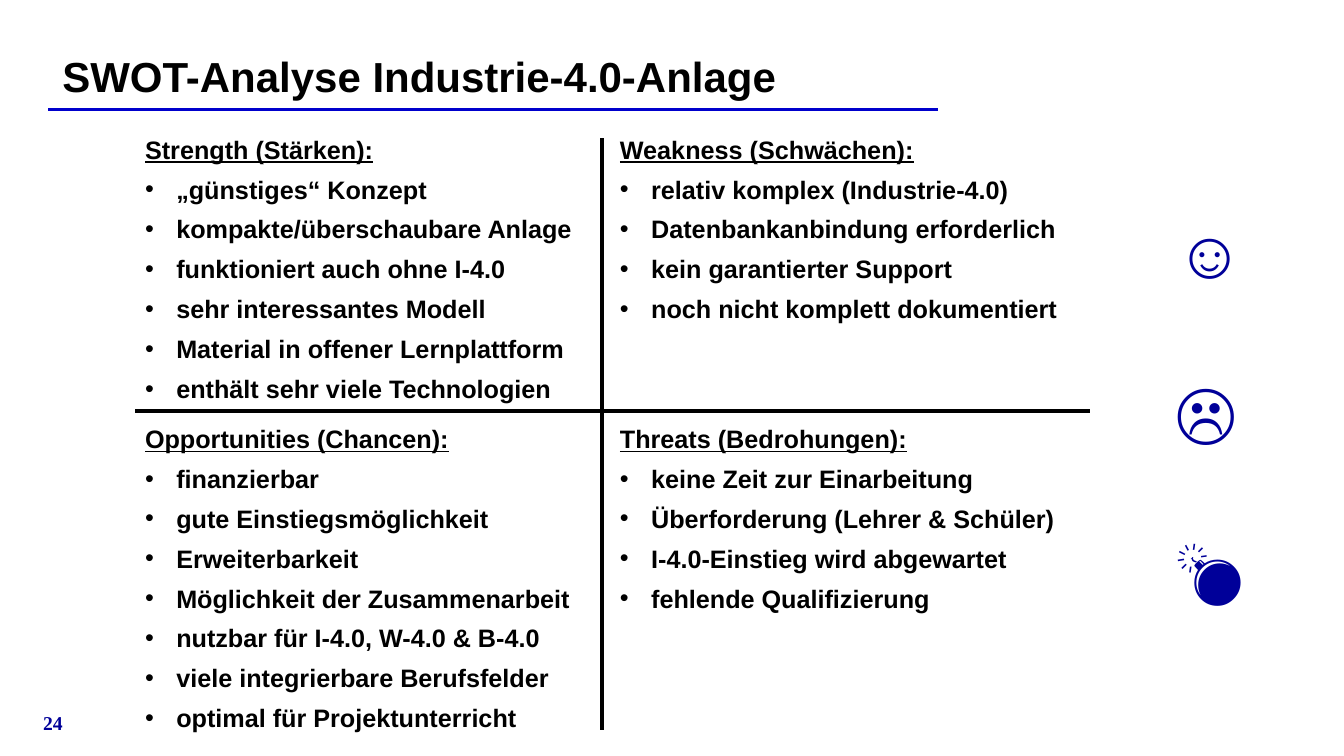
from dataclasses import dataclass

from lxml import etree
from pptx import Presentation
from pptx.dml.color import RGBColor
from pptx.enum.shapes import MSO_CONNECTOR
from pptx.enum.text import MSO_ANCHOR
from pptx.oxml.ns import qn
from pptx.util import Inches, Pt

STRAIGHT = MSO_CONNECTOR.STRAIGHT
MIDDLE = MSO_ANCHOR.MIDDLE


@dataclass(frozen=True)
class Theme:
    text: RGBColor = RGBColor(0x00, 0x00, 0x00)
    rule: RGBColor = RGBColor(0x00, 0x00, 0xCC)
    accent: RGBColor = RGBColor(0x00, 0x00, 0x99)
    sans: str = "Arial"
    serif: str = "Times New Roman"
    title_size: float = 30
    body_size: float = 18
    symbol_size: float = 48
    number_size: float = 14
    item_gap: float = 6.9
    symbol_gap: float = 55
    bullet_indent: float = 0.31


THEME = Theme()

# Rows of the SWOT grid, each with a left and a right quadrant.
SWOT = [
    [
        ("Strength (Stärken):", [
            "„günstiges“ Konzept",
            "kompakte/überschaubare Anlage",
            "funktioniert auch ohne I-4.0",
            "sehr interessantes Modell",
            "Material in offener Lernplattform",
            "enthält sehr viele Technologien",
        ]),
        ("Weakness (Schwächen):", [
            "relativ komplex (Industrie-4.0)",
            "Datenbankanbindung erforderlich",
            "kein garantierter Support",
            "noch nicht komplett dokumentiert",
        ]),
    ],
    [
        ("Opportunities (Chancen):", [
            "finanzierbar",
            "gute Einstiegsmöglichkeit",
            "Erweiterbarkeit",
            "Möglichkeit der Zusammenarbeit",
            "nutzbar für I-4.0, W-4.0 & B-4.0",
            "viele integrierbare Berufsfelder",
            "optimal für Projektunterricht",
        ]),
        ("Threats (Bedrohungen):", [
            "keine Zeit zur Einarbeitung",
            "Überforderung (Lehrer & Schüler)",
            "I-4.0-Einstieg wird abgewartet",
            "fehlende Qualifizierung",
        ]),
    ],
]
SYMBOLS = ["☺", "☹", "💣"]


def add_line(slide, start, end, color, width):
    line = slide.shapes.add_connector(STRAIGHT, *map(Inches, start + end))
    line.line.color.rgb = color
    line.line.width = Pt(width)
    etree.SubElement(line._element.spPr, qn("a:effectLst"))


def add_bullet(paragraph):
    properties = paragraph._p.get_or_add_pPr()
    indent = Inches(THEME.bullet_indent)
    properties.set("marL", str(indent))
    properties.set("indent", str(-indent))
    etree.SubElement(properties, qn("a:buFont")).set("typeface", THEME.sans)
    etree.SubElement(properties, qn("a:buChar")).set("char", "•")


def add_text(slide, box, lines, size, name, color, gap=0, bulleted=False, wrap=True):
    """Add a bold text box; with bulleted, every line after the first is a bullet."""
    frame = slide.shapes.add_textbox(*map(Inches, box)).text_frame
    frame.word_wrap = wrap
    for index, line in enumerate(lines):
        paragraph = frame.add_paragraph() if index else frame.paragraphs[0]
        paragraph.text = line
        if index:
            if bulleted:
                add_bullet(paragraph)
            paragraph.space_before = Pt(gap)
        font = paragraph.font
        font.size, font.name, font.bold = Pt(size), name, True
        font.color.rgb = color
    return frame


def add_header(slide, box):
    left, top, width, height = box
    frame = add_text(slide, box, ["SWOT-Analyse Industrie-4.0-Anlage"],
                     THEME.title_size, THEME.sans, THEME.text)
    frame.vertical_anchor = MIDDLE
    bottom = top + height
    add_line(slide, (left - 0.04, bottom), (left + width + 0.28, bottom), THEME.rule, 2.25)


def add_swot_grid(slide, box):
    left, top, width, height = box
    cross_x, cross_y = left + 4.63, top + 2.71
    add_line(slide, (left, cross_y), (left + width, cross_y), THEME.text, 3)
    add_line(slide, (cross_x, top), (cross_x, top + height), THEME.text, 3)
    columns = [(left, 4.59), (cross_x + 0.08, 4.69)]
    rows = [(top - 0.09, 2.73), (cross_y + 0.07, 3.11)]
    for (row_top, row_height), quadrants in zip(rows, SWOT):
        for (column_left, column_width), (heading, items) in zip(columns, quadrants):
            frame = add_text(slide, (column_left, row_top, column_width, row_height),
                             [heading, *items], THEME.body_size, THEME.sans,
                             THEME.text, THEME.item_gap, bulleted=True)
            frame.paragraphs[0].font.underline = True


def add_symbols(slide, box):
    add_text(slide, box, SYMBOLS, THEME.symbol_size, THEME.serif,
             THEME.accent, THEME.symbol_gap)


def add_page_number(slide, box):
    add_text(slide, box, ["24"], THEME.number_size, THEME.serif, THEME.accent, wrap=False)


def main():
    presentation = Presentation()
    presentation.slide_width = Inches(13.33)
    presentation.slide_height = Inches(7.5)
    slide = presentation.slides.add_slide(presentation.slide_layouts[6])
    add_page_number(slide, (0.33, 7, 0.59, 0.34))
    add_header(slide, (0.52, 0.42, 8.5, 0.67))
    add_swot_grid(slide, (1.34, 1.37, 9.47, 5.87))
    add_symbols(slide, (11.56, 2.05, 1.03, 4.14))
    presentation.save("out.pptx")


if __name__ == "__main__":
    main()
